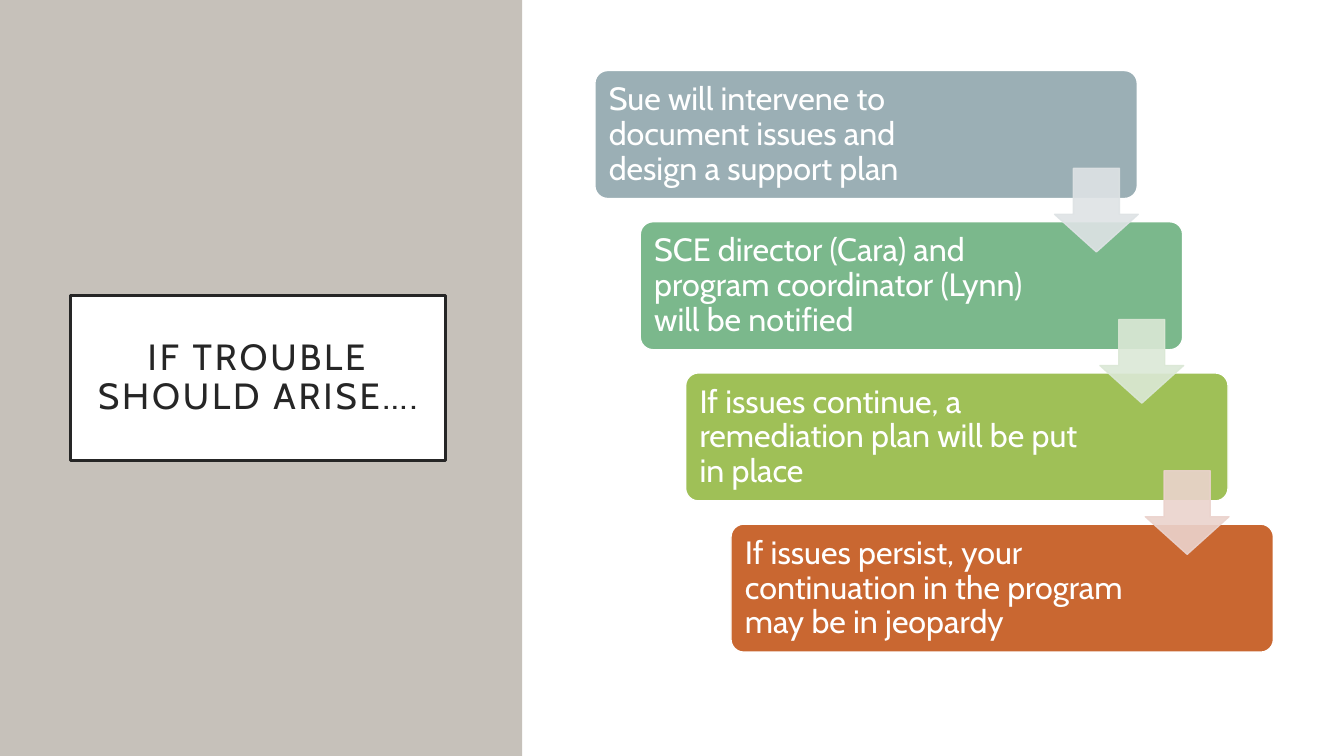
from lxml.etree import SubElement
from pptx import Presentation
from pptx.dml.color import RGBColor
from pptx.enum.shapes import MSO_SHAPE
from pptx.enum.text import MSO_ANCHOR, MSO_AUTO_SIZE, PP_ALIGN
from pptx.oxml.ns import qn
from pptx.util import Pt

TITLE = "IF TROUBLE SHOULD ARISE…."
STEPS = [
    ("Sue will intervene to document issues and design a support plan", "9BAFB5", 390),
    ("SCE director (Cara) and program coordinator (Lynn) will be notified", "7BB88C", 403),
    ("If issues continue, a remediation plan will be put in place", "9FC057", 403),
    ("If issues persist, your continuation in the program may be in jeopardy", "C96731", 403),
]
ARROW_COLORS = ["DEE3E5", "DBE8D6", "EBD3CD"]
PANELS = [((0, 0, 518, 750), "C6C1BA"), ((520, 0, 813, 750), "FFFFFF")]
TITLE_BOX = (70, 293, 372, 164)
FONT = "Cabin"
WHITE, DARK = "FFFFFF", "262626"
CARD_LEFT, CARD_TOP, CARD_WIDTH, CARD_HEIGHT = 590, 70, 538, 127
STEP_X, STEP_Y = 45, 150
TEXT_OFFSET, TEXT_HEIGHT = 4, 120
ARROW_LEFT, ARROW_TOP, ARROW_SIZE = 1046, 167, 83
ARROW_ALPHA = 90
PX = 9144


def px(*lengths):
    return [length * PX for length in lengths]


def color(value):
    return RGBColor.from_string(value)


def paint(shape, fill, line=None, width=1):
    shape.fill.solid()
    shape.fill.fore_color.rgb = color(fill)
    if line:
        shape.line.color.rgb = color(line)
        shape.line.width = Pt(width)
    else:
        shape.line.fill.background()


def add_block(shapes, kind, box, fill, line=None, adjustments=()):
    shape = shapes.add_shape(kind, *px(*box))
    shape.shadow.inherit = False
    paint(shape, fill, line)
    for index, value in enumerate(adjustments):
        shape.adjustments[index] = value
    return shape


def write(shape, text, size, font_color, inset, align):
    frame = shape.text_frame
    frame.word_wrap = True
    frame.auto_size = MSO_AUTO_SIZE.NONE
    frame.vertical_anchor = MSO_ANCHOR.MIDDLE
    frame.margin_left = frame.margin_right = inset * PX
    frame.margin_top = frame.margin_bottom = inset * PX
    paragraph = frame.paragraphs[0]
    paragraph.alignment = align
    paragraph.line_spacing = 0.9
    run = paragraph.add_run()
    run.text = text
    run.font.size = Pt(size)
    run.font.name = FONT
    run.font.color.rgb = color(font_color)
    return run


def set_alpha(shape, percent):
    for node in shape.element.spPr.iter(qn("a:srgbClr")):
        SubElement(node, qn("a:alpha")).set("val", str(percent * 1000))


def add_title(slide):
    title = slide.shapes.title
    title.left, title.top, title.width, title.height = px(*TITLE_BOX)
    paint(title, WHITE, DARK, 2.5)
    run = write(title, TITLE, 26, DARK, 20, PP_ALIGN.CENTER)
    run.font._element.set("spc", "200")
    for box, fill in PANELS:
        panel = add_block(slide.shapes, MSO_SHAPE.RECTANGLE, box, fill)
        title.element.addprevious(panel.element)


def add_steps(shapes):
    for index, (text, fill, text_width) in enumerate(STEPS):
        left, top = CARD_LEFT + index * STEP_X, CARD_TOP + index * STEP_Y
        add_block(shapes, MSO_SHAPE.ROUNDED_RECTANGLE,
                  (left, top, CARD_WIDTH, CARD_HEIGHT), fill, WHITE, [0.1])
        label = shapes.add_textbox(*px(left + TEXT_OFFSET, top + TEXT_OFFSET,
                                       text_width, TEXT_HEIGHT))
        write(label, text, 23, WHITE, 10, PP_ALIGN.LEFT)
    for index, fill in enumerate(ARROW_COLORS):
        box = (ARROW_LEFT + index * STEP_X, ARROW_TOP + index * STEP_Y,
               ARROW_SIZE, ARROW_SIZE)
        arrow = add_block(shapes, MSO_SHAPE.DOWN_ARROW, box, fill, fill, [0.55, 0.45])
        set_alpha(arrow, ARROW_ALPHA)


def main():
    presentation = Presentation()
    presentation.slide_width, presentation.slide_height = px(1333, 750)
    slide = presentation.slides.add_slide(presentation.slide_layouts[5])
    add_title(slide)
    add_steps(slide.shapes)
    presentation.save("out.pptx")


if __name__ == "__main__":
    main()
